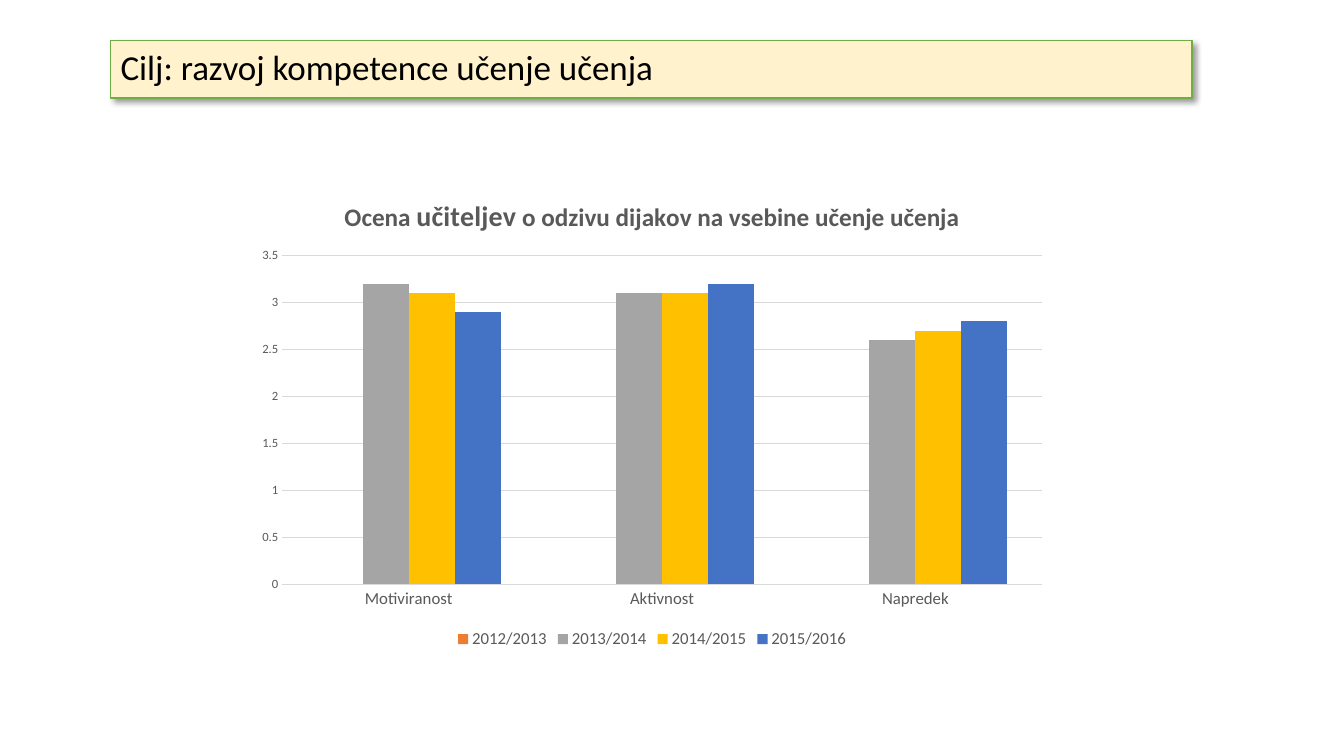
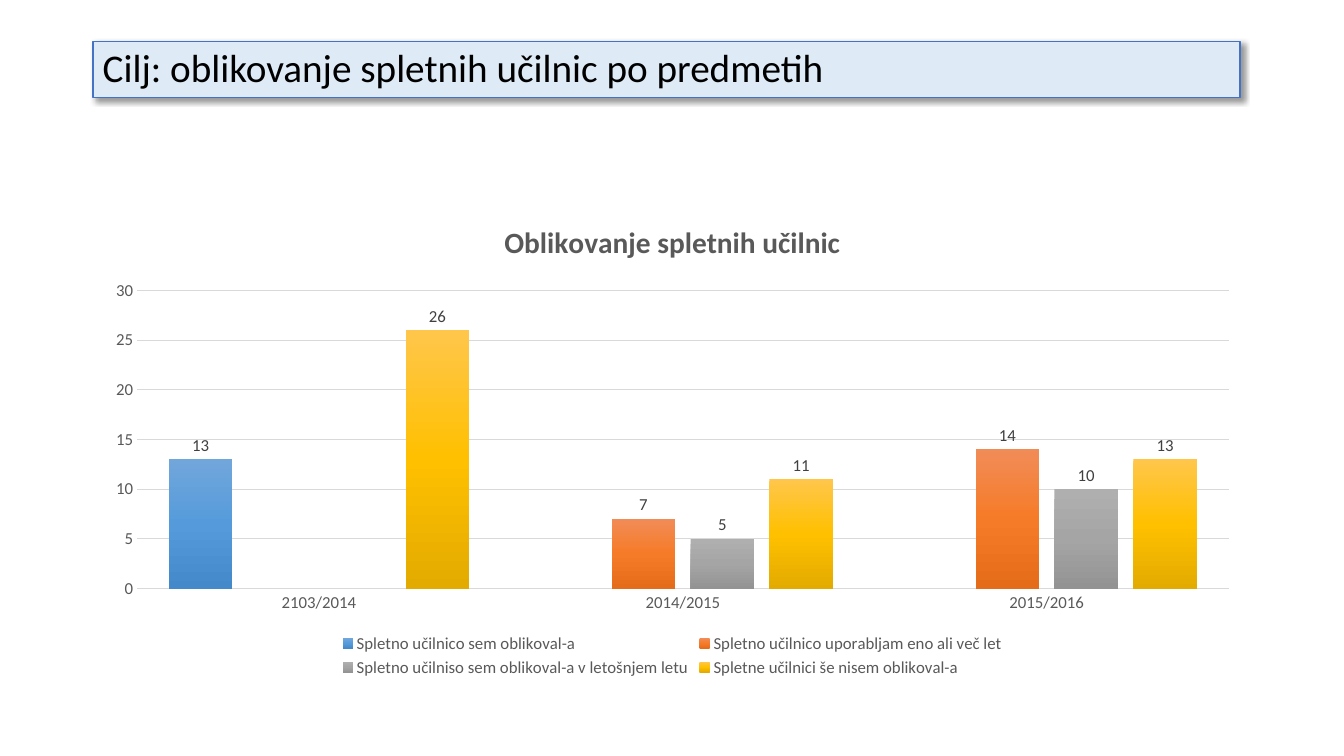
from copy import deepcopy

from lxml.etree import SubElement
from pptx import Presentation
from pptx.chart.data import CategoryChartData
from pptx.dml.color import RGBColor
from pptx.enum.chart import XL_CHART_TYPE, XL_LABEL_POSITION, XL_LEGEND_POSITION, XL_TICK_MARK
from pptx.enum.shapes import MSO_SHAPE
from pptx.enum.text import MSO_ANCHOR, PP_ALIGN
from pptx.oxml.ns import qn
from pptx.util import Cm, Pt

FONT = "Calibri"
BLACK = RGBColor(0x00, 0x00, 0x00)
GREY_TEXT = RGBColor(0x59, 0x59, 0x59)
LABEL_TEXT = RGBColor(0x40, 0x40, 0x40)
GRID = RGBColor(0xD9, 0xD9, 0xD9)
CREAM = RGBColor(0xFF, 0xF2, 0xCC)
PALE_BLUE = RGBColor(0xDE, 0xEB, 0xF7)
GREEN = RGBColor(0x70, 0xAD, 0x47)
BLUE = RGBColor(0x44, 0x72, 0xC4)
ORANGE = RGBColor(0xED, 0x7D, 0x31)
GREY = RGBColor(0xA5, 0xA5, 0xA5)
GOLD = RGBColor(0xFF, 0xC0, 0x00)
BLUE_FADE = (RGBColor(0x71, 0xA6, 0xDB), RGBColor(0x55, 0x9B, 0xDB), RGBColor(0x44, 0x8A, 0xCA))
ORANGE_FADE = (RGBColor(0xF1, 0x8C, 0x57), RGBColor(0xF6, 0x7B, 0x28), RGBColor(0xE5, 0x6C, 0x19))
GREY_FADE = (RGBColor(0xAF, 0xAF, 0xAF), GREY, RGBColor(0x93, 0x93, 0x93))
GOLD_FADE = (RGBColor(0xFF, 0xC6, 0x4B), GOLD, RGBColor(0xE3, 0xAB, 0x00))

SLIDES = [
    {
        "goal": "Cilj: razvoj kompetence učenje učenja",
        "goal_size": 25,
        "band": (2.79, 1.02, 27.25, 1.45),
        "band_colors": (CREAM, GREEN),
        "chart_box": (6.2, 4.52, 20.47, 11.94),
        "chart_title": [("Ocena ", 18), ("učiteljev", 20),
                        (" o odzivu dijakov na vsebine učenje učenja", 18)],
        "categories": ["Motiviranost", "Aktivnost", "Napredek"],
        "series": [
            ("2012/2013", (None, None, None), (ORANGE,)),
            ("2013/2014", (3.2, 3.1, 2.6), (GREY,)),
            ("2014/2015", (3.1, 3.1, 2.7), (GOLD,)),
            ("2015/2016", (2.9, 3.2, 2.8), (BLUE,)),
        ],
        "scale": (3.5, 0.5),
        "scale_size": 9,
        "spacing": (150, 0),
        "base_line": False,
        "labels": False,
    },
    {
        "goal": "Cilj: oblikovanje spletnih učilnic po predmetih",
        "goal_size": 28,
        "band": (2.34, 1.04, 28.91, 1.42),
        "band_colors": (PALE_BLUE, BLUE),
        "chart_box": (2.34, 5.08, 29.21, 12.09),
        "chart_title": [("Oblikovanje spletnih učilnic", 21)],
        "categories": ["2103/2014", "2014/2015", "2015/2016"],
        "series": [
            ("Spletno učilnico sem oblikoval-a", (13, None, None), BLUE_FADE),
            ("Spletno učilnico uporabljam eno ali več let", (None, 7, 14), ORANGE_FADE),
            ("Spletno učilniso sem oblikoval-a v letošnjem letu", (None, 5, 10), GREY_FADE),
            ("Spletne učilnici še nisem oblikoval-a", (26, 11, 13), GOLD_FADE),
        ],
        "scale": (30, 5),
        "scale_size": 12,
        "spacing": (100, -24),
        "base_line": True,
        "labels": True,
    },
]


def style_font(font, size, color, bold=False):
    font.name = FONT
    font.size = Pt(size)
    font.bold = bold
    font.color.rgb = color


def add_shadow(band):
    band.shadow.inherit = False
    effects = band._element.spPr.find(qn("a:effectLst"))
    shadow = SubElement(effects, qn("a:outerShdw"), blurRad=str(Pt(4)), dist=str(Pt(3)),
                        dir="2700000", algn="tl", rotWithShape="0")
    color = SubElement(shadow, qn("a:srgbClr"), val=str(BLACK))
    SubElement(color, qn("a:alpha"), val="40000")


def add_goal(slide, content):
    band = slide.shapes.add_shape(MSO_SHAPE.RECTANGLE, *map(Cm, content["band"]))
    fill, line = content["band_colors"]
    band.fill.solid()
    band.fill.fore_color.rgb = fill
    band.line.color.rgb = line
    band.line.width = Pt(1)
    add_shadow(band)
    frame = band.text_frame
    frame.word_wrap = True
    frame.vertical_anchor = MSO_ANCHOR.MIDDLE
    paragraph = frame.paragraphs[0]
    paragraph.alignment = PP_ALIGN.LEFT
    paragraph.line_spacing = 0.9
    run = paragraph.add_run()
    run.text = content["goal"]
    style_font(run.font, content["goal_size"], BLACK)


def fill_series(series, colors):
    fill = series.format.fill
    if len(colors) == 1:
        fill.solid()
        fill.fore_color.rgb = colors[0]
        return
    fill.gradient()
    fill.gradient_angle = 270
    stop_list = next(series._element.iter(qn("a:gsLst")))
    stop_list.append(deepcopy(stop_list[0]))
    for index, (stop, color) in enumerate(zip(fill.gradient_stops, colors)):
        stop.position = index / (len(colors) - 1)
        stop.color.rgb = color


def style_axes(chart, content):
    categories, values = chart.category_axis, chart.value_axis
    for axis, size in ((categories, 12), (values, content["scale_size"])):
        axis.major_tick_mark = XL_TICK_MARK.NONE
        axis.minor_tick_mark = XL_TICK_MARK.NONE
        axis.format.line.fill.background()
        style_font(axis.tick_labels.font, size, GREY_TEXT)
    if content["base_line"]:
        categories.format.line.color.rgb = GRID
        categories.format.line.width = Pt(1)
    values.minimum_scale = 0
    values.maximum_scale, values.major_unit = content["scale"]
    values.has_major_gridlines = True
    values.major_gridlines.format.line.color.rgb = GRID
    values.major_gridlines.format.line.width = Pt(0.75)


def add_results(slide, content):
    data = CategoryChartData()
    data.categories = content["categories"]
    for name, values, _ in content["series"]:
        data.add_series(name, values)
    chart = slide.shapes.add_chart(
        XL_CHART_TYPE.COLUMN_CLUSTERED, *map(Cm, content["chart_box"]), data).chart
    style_font(chart.font, 10, BLACK)

    chart.has_title = True
    heading = chart.chart_title.text_frame.paragraphs[0]
    for text, size in content["chart_title"]:
        run = heading.add_run()
        run.text = text
        style_font(run.font, size, GREY_TEXT, bold=True)
    chart.chart_title.include_in_layout = False

    chart.has_legend = True
    chart.legend.position = XL_LEGEND_POSITION.BOTTOM
    chart.legend.include_in_layout = False
    style_font(chart.legend.font, 12, GREY_TEXT)
    style_axes(chart, content)

    plot = chart.plots[0]
    plot.vary_by_categories = False
    plot.gap_width, plot.overlap = content["spacing"]
    for series, (_, _, colors) in zip(plot.series, content["series"]):
        fill_series(series, colors)
    if content["labels"]:
        plot.has_data_labels = True
        labels = plot.data_labels
        labels.show_value = True
        labels.position = XL_LABEL_POSITION.OUTSIDE_END
        style_font(labels.font, 12, LABEL_TEXT)


def main():
    deck = Presentation()
    deck.slide_width, deck.slide_height = Cm(33.87), Cm(19.05)
    for content in SLIDES:
        slide = deck.slides.add_slide(deck.slide_layouts[6])
        add_goal(slide, content)
        add_results(slide, content)
    deck.save("out.pptx")


if __name__ == "__main__":
    main()
